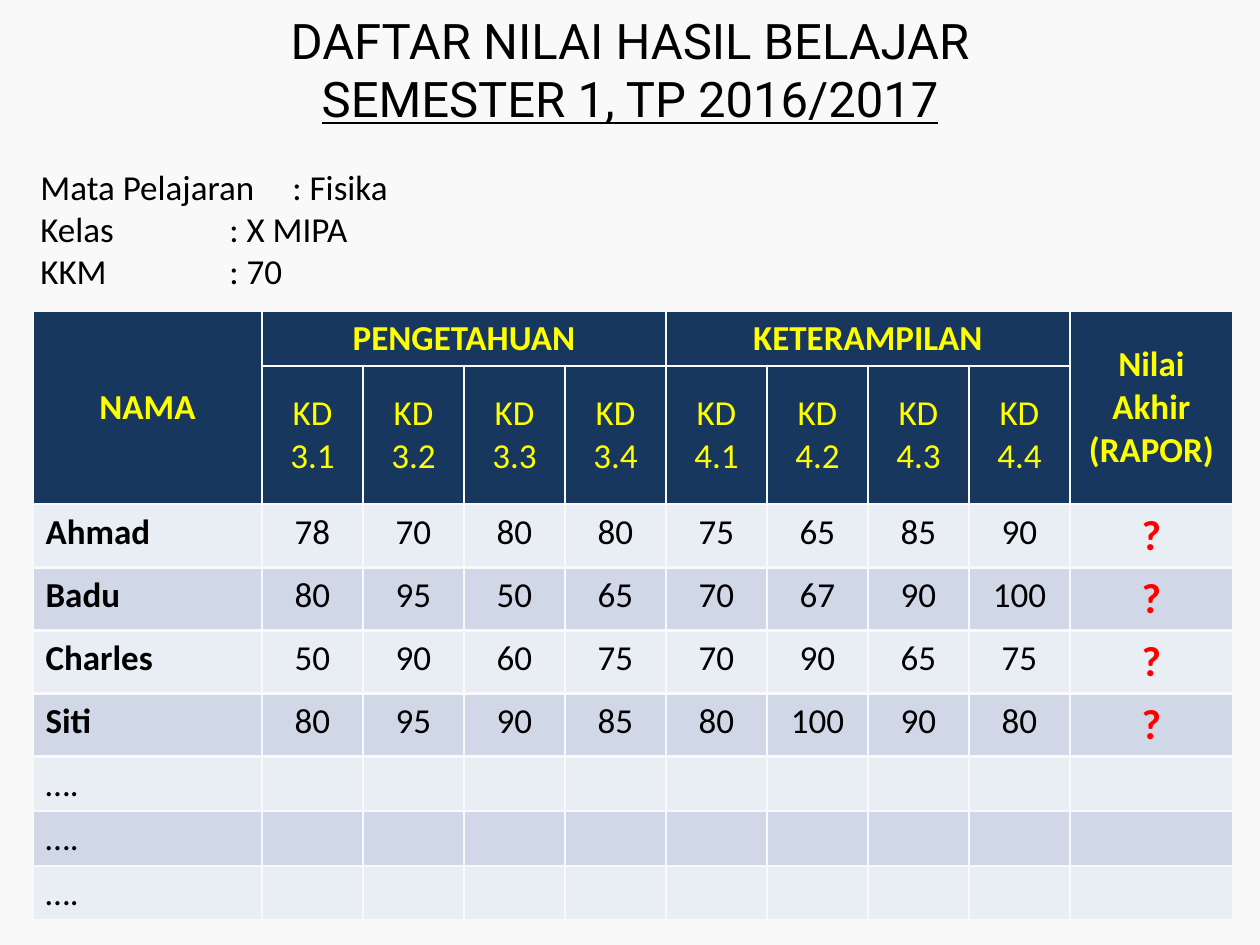
from dataclasses import dataclass

from lxml.etree import SubElement
from pptx import Presentation
from pptx.dml.color import RGBColor
from pptx.enum.text import MSO_ANCHOR, PP_ALIGN
from pptx.oxml.ns import qn
from pptx.util import Emu, Pt


@dataclass(frozen=True)
class Theme:
    back: str = "F9F9F9"
    navy: str = "17375E"
    yellow: str = "FFFF00"
    black: str = "000000"
    red: str = "FF0000"
    bands: tuple = ("E9EDF4", "D0D8E8")
    head: str = "Roboto"
    body: str = "Calibri"
    title: int = 28
    text: int = 20
    mark: int = 24
    line: float = 1.5


@dataclass(frozen=True)
class Style:
    color: str
    size: int
    bold: bool = False
    center: bool = True
    face: str = "Calibri"


@dataclass(frozen=True)
class Head:
    row: int
    col: int
    text: str
    rows: int = 1
    cols: int = 1
    bold: bool = True


@dataclass(frozen=True)
class Pupil:
    name: str
    marks: tuple = ("",) * 8
    final: str = ""


THEME = Theme()
TITLE = Style(THEME.black, THEME.title, face=THEME.head)
INFO = Style(THEME.black, THEME.text, center=False)
NAME = Style(THEME.black, THEME.text, bold=True, center=False)
MARK = Style(THEME.black, THEME.text)
FINAL = Style(THEME.red, THEME.mark, bold=True)

COLS = [229] + [101] * 8 + [163]
ROWS = [52, 81] + [52] * 7

HEADS = [
    Head(0, 0, "NAMA", rows=2),
    Head(0, 1, "PENGETAHUAN", cols=4),
    Head(0, 5, "KETERAMPILAN", cols=4),
    Head(0, 9, "Nilai Akhir\n(RAPOR)", rows=2),
] + [
    Head(1, 4 * unit + part - 12, f"KD {unit}.{part}", bold=False)
    for unit in (3, 4) for part in range(1, 5)
]

PUPILS = [
    Pupil("Ahmad", (78, 70, 80, 80, 75, 65, 85, 90), "?"),
    Pupil("Badu", (80, 95, 50, 65, 70, 67, 90, 100), "?"),
    Pupil("Charles", (50, 90, 60, 75, 70, 90, 65, 75), "?"),
    Pupil("Siti", (80, 95, 90, 85, 80, 100, 90, 80), "?"),
] + [Pupil("….")] * 3


def px(count: int) -> Emu:
    return Emu(round(count * 914400 / 126))


def rgb(code: str) -> RGBColor:
    return RGBColor.from_string(code)


def dress(frame, style: Style) -> None:
    """Give every paragraph of a text frame one style."""
    for para in frame.paragraphs:
        para.alignment = PP_ALIGN.CENTER if style.center else PP_ALIGN.LEFT
        para.font.name = style.face
        para.font.size = Pt(style.size)
        para.font.bold = style.bold
        para.font.color.rgb = rgb(style.color)


def add_box(slide, left: int, top: int, width: int, height: int):
    frame = slide.shapes.add_textbox(*map(px, (left, top, width, height))).text_frame
    frame.word_wrap = True
    return frame


def add_title(slide) -> None:
    frame = add_box(slide, 63, 26, 1134, 86)
    frame.vertical_anchor = MSO_ANCHOR.MIDDLE
    para = frame.paragraphs[0]
    para.add_run().text = "DAFTAR NILAI HASIL BELAJAR"
    para.add_line_break()
    term = para.add_run()
    term.text = "SEMESTER 1, TP 2016/2017"
    term.font.underline = True
    dress(frame, TITLE)


def add_info(slide) -> None:
    frame = add_box(slide, 28, 159, 421, 140)
    frame.text = "Mata Pelajaran\t: Fisika\nKelas\t\t: X MIPA\nKKM\t\t: 70"
    dress(frame, INFO)


def paint(cell, color: str) -> None:
    """Fill a cell and rule its four sides."""
    props = cell._tc.get_or_add_tcPr()
    for side in ("lnL", "lnR", "lnT", "lnB"):
        line = SubElement(props, qn(f"a:{side}"), w=str(Pt(THEME.line)))
        fill = SubElement(line, qn("a:solidFill"))
        SubElement(fill, qn("a:srgbClr"), val=THEME.back)
    cell.fill.solid()
    cell.fill.fore_color.rgb = rgb(color)


def write(cell, text: str, style: Style) -> None:
    if text:
        cell.text = text
        dress(cell.text_frame, style)


def add_grades(slide) -> None:
    shape = slide.shapes.add_table(
        len(ROWS), len(COLS), px(33), px(311), px(sum(COLS)), px(sum(ROWS)))
    table = shape.table
    table.first_row = table.horz_banding = False
    for col, width in zip(table.columns, COLS):
        col.width = px(width)
    for index, (row, height) in enumerate(zip(table.rows, ROWS)):
        row.height = px(height)
        for cell in row.cells:
            paint(cell, THEME.navy if index < 2 else THEME.bands[index % 2])

    for head in HEADS:
        cell = table.cell(head.row, head.col)
        if head.rows * head.cols > 1:
            cell.merge(table.cell(head.row + head.rows - 1, head.col + head.cols - 1))
        cell.vertical_anchor = MSO_ANCHOR.MIDDLE
        write(cell, head.text, Style(THEME.yellow, THEME.text, head.bold))

    for row, pupil in enumerate(PUPILS, 2):
        write(table.cell(row, 0), pupil.name, NAME if pupil.final else INFO)
        for col, mark in enumerate(pupil.marks, 1):
            write(table.cell(row, col), str(mark), MARK)
        write(table.cell(row, 9), pupil.final, FINAL)


def main() -> None:
    deck = Presentation()
    deck.slide_width, deck.slide_height = px(1260), px(945)
    slide = deck.slides.add_slide(deck.slide_layouts[6])
    slide.background.fill.solid()
    slide.background.fill.fore_color.rgb = rgb(THEME.back)
    add_title(slide)
    add_grades(slide)
    add_info(slide)
    deck.save("out.pptx")


if __name__ == "__main__":
    main()
